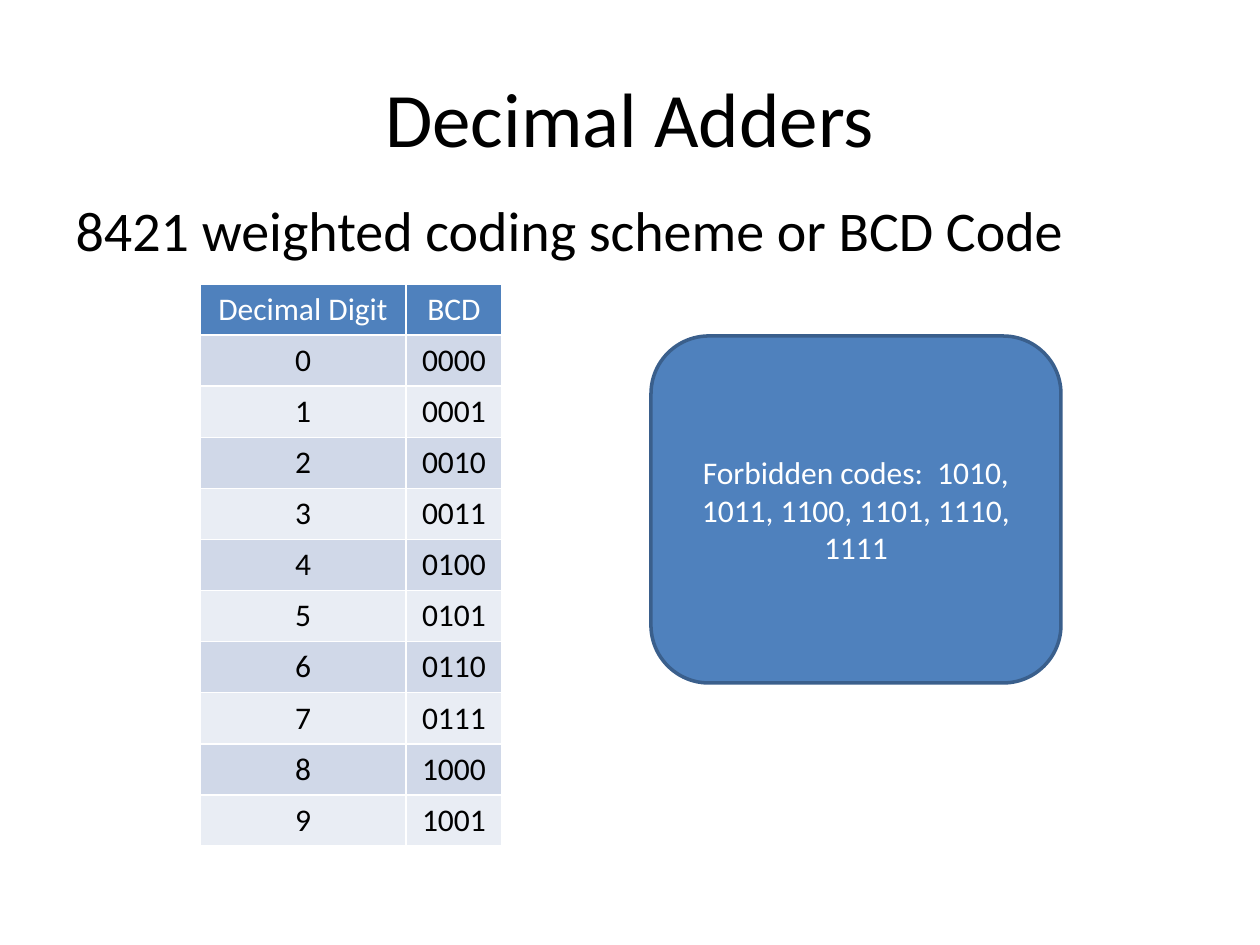
"""Build the slide on decimal adders with its BCD code table."""
from pptx import Presentation, util as u
from pptx.dml.color import RGBColor
from pptx.enum import shapes, text
from pptx.oxml.ns import qn

TITLE = "Decimal Adders"
SCHEME = "8421 weighted coding scheme or BCD Code"
FORBIDDEN = "Forbidden codes:  1010, 1011, 1100, 1101, 1110, 1111"
HEADER = ("Decimal Digit", "BCD")
CODES = [(str(digit), f"{digit:04b}") for digit in range(10)]

TITLE_BOX = (63, 38, 1134, 157)
BODY_BOX = (63, 189, 1134, 624)
FORBIDDEN_BOX = (651, 336, 410, 347)
TABLE_LEFT, TABLE_TOP = 200, 284
COLUMN_WIDTHS = (206, 96)
ROW_HEIGHT = 51

FONT = "Calibri"
BLACK = RGBColor(0x00, 0x00, 0x00)
WHITE = RGBColor(0xFF, 0xFF, 0xFF)
BLUE = RGBColor(0x4F, 0x81, 0xBD)
OUTLINE = RGBColor(0x3A, 0x5F, 0x8C)
BANDS = (RGBColor(0xD0, 0xD8, 0xE8), RGBColor(0xE9, 0xED, 0xF4))


def px(length):
    return round(length * 914400 / 126)


def write(frame, content, size, color, align):
    frame.text = content
    paragraph = frame.paragraphs[0]
    paragraph.alignment = align
    font = paragraph.runs[0].font
    font.name, font.size, font.bold = FONT, u.Pt(size), False
    font.color.rgb = color
    return paragraph


def place(shape, box):
    shape.left, shape.top, shape.width, shape.height = map(px, box)


def add_headings(slide):
    title, body = slide.shapes.title, slide.placeholders[1]
    place(title, TITLE_BOX)
    write(title.text_frame, TITLE, 44, BLACK, text.PP_ALIGN.CENTER)
    place(body, BODY_BOX)
    paragraph = write(body.text_frame, SCHEME, 32, BLACK, text.PP_ALIGN.LEFT)
    properties = paragraph._p.get_or_add_pPr()
    properties.set("marL", "0")
    properties.set("indent", "0")
    properties.append(properties.makeelement(qn("a:buNone"), {}))


def add_code_table(slide):
    rows = [HEADER] + CODES
    box = (TABLE_LEFT, TABLE_TOP, sum(COLUMN_WIDTHS), ROW_HEIGHT * len(rows))
    table = slide.shapes.add_table(len(rows), len(HEADER), *map(px, box)).table
    for column, width in zip(table.columns, COLUMN_WIDTHS):
        column.width = px(width)
    for index, row in enumerate(rows):
        table.rows[index].height = px(ROW_HEIGHT)
        fill = BANDS[(index - 1) % 2] if index else BLUE
        color = BLACK if index else WHITE
        for cell, content in zip(table.rows[index].cells, row):
            cell.fill.solid()
            cell.fill.fore_color.rgb = fill
            write(cell.text_frame, content, 18, color, text.PP_ALIGN.CENTER)


def add_forbidden_codes(slide):
    shape = slide.shapes.add_shape(
        shapes.MSO_SHAPE.ROUNDED_RECTANGLE, *map(px, FORBIDDEN_BOX))
    shape.shadow.inherit = False
    shape.fill.solid()
    shape.fill.fore_color.rgb = BLUE
    shape.line.color.rgb = OUTLINE
    shape.line.width = u.Pt(2)
    shape.text_frame.word_wrap = True
    shape.text_frame.vertical_anchor = text.MSO_ANCHOR.MIDDLE
    write(shape.text_frame, FORBIDDEN, 18, WHITE, text.PP_ALIGN.CENTER)


def main():
    presentation = Presentation()
    presentation.slide_width, presentation.slide_height = u.Inches(10), u.Inches(7.5)
    slide = presentation.slides.add_slide(presentation.slide_layouts[1])
    add_headings(slide)
    add_code_table(slide)
    add_forbidden_codes(slide)
    presentation.save("out.pptx")


if __name__ == "__main__":
    main()
